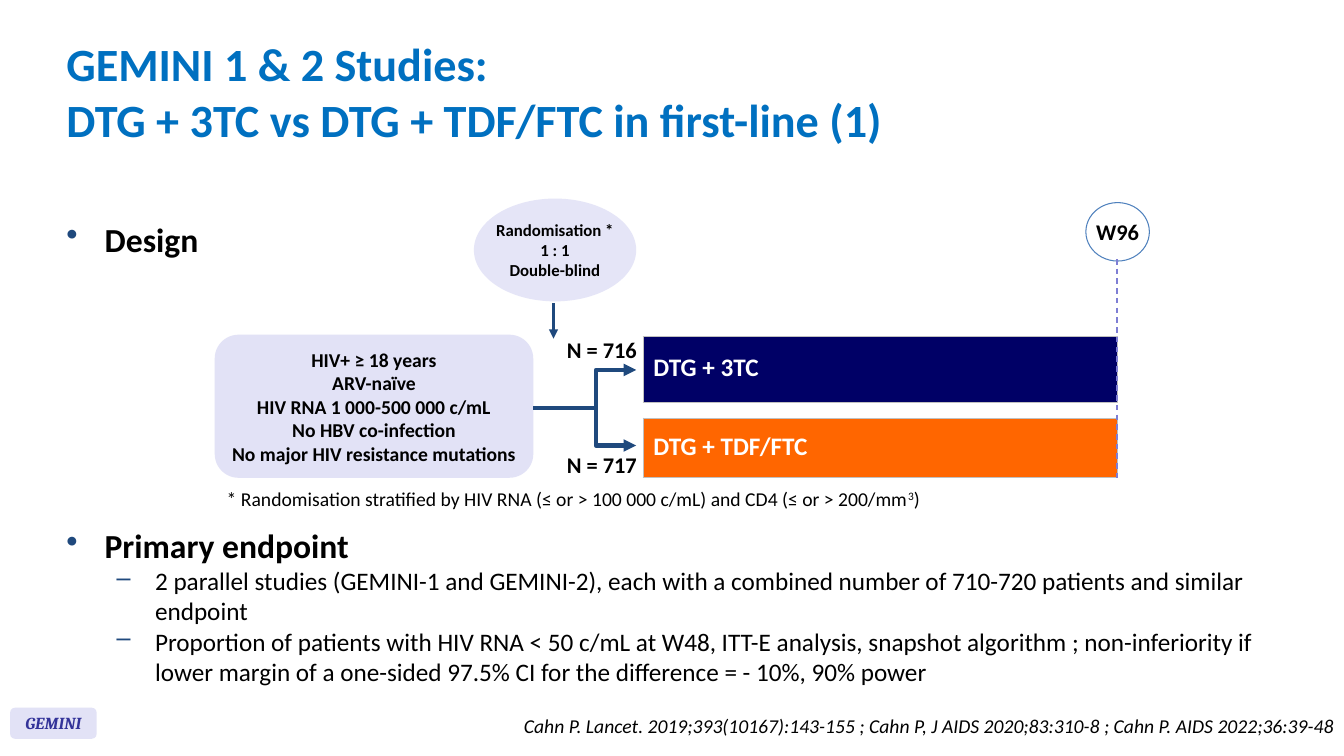
"""Build the GEMINI 1 & 2 study design slide."""
from lxml import etree
from pptx import Presentation
from pptx.dml.color import RGBColor
from pptx.enum import dml, shapes, text
from pptx.oxml import ns
from pptx.util import Inches, Pt

BLACK = RGBColor(0x00, 0x00, 0x00)
WHITE = RGBColor(0xFF, 0xFF, 0xFF)
TITLE_BLUE = RGBColor(0x00, 0x70, 0xC0)
NAVY = RGBColor(0x00, 0x00, 0x66)
ORANGE = RGBColor(0xFF, 0x66, 0x00)
ARROW_BLUE = RGBColor(0x1F, 0x49, 0x7D)
LAVENDER = RGBColor(0xE2, 0xE2, 0xF6)
PALE_LAVENDER = RGBColor(0xE5, 0xE5, 0xF7)
INDIGO = RGBColor(0x33, 0x33, 0x99)
CIRCLE_BLUE = RGBColor(0x4F, 0x81, 0xBD)
DASH_BLUE = RGBColor(0x7E, 0x7E, 0xD4)
BORDER_GREY = RGBColor(0xC0, 0xC0, 0xC0)
LEFT, CENTER, RIGHT = text.PP_ALIGN.LEFT, text.PP_ALIGN.CENTER, text.PP_ALIGN.RIGHT
TOP, MIDDLE = text.MSO_ANCHOR.TOP, text.MSO_ANCHOR.MIDDLE


def set_font(font, size, color=BLACK, bold=False, italic=False, name="Calibri"):
    """Set the look of a font."""
    font.name, font.size = name, Pt(size)
    font.bold, font.italic = bold, italic
    font.color.rgb = color


def write(frame, lines, size, align=LEFT, anchor=TOP, wrap=True, **style):
    """Write one paragraph per line in a text frame."""
    frame.word_wrap, frame.vertical_anchor = wrap, anchor
    for index, line in enumerate(lines):
        paragraph = frame.paragraphs[0] if index == 0 else frame.add_paragraph()
        paragraph.text, paragraph.alignment = line, align
        for run in paragraph.runs:
            set_font(run.font, size, **style)


def add_text(slide, box, lines, size, **style):
    """Add a text box."""
    shape = slide.shapes.add_textbox(*map(Inches, box))
    write(shape.text_frame, lines, size, **style)
    return shape.text_frame


def add_label(slide, preset, box, fill, lines, size, line=None, **style):
    """Add a filled shape with centred text."""
    shape = slide.shapes.add_shape(preset, *map(Inches, box))
    shape.shadow.inherit = False
    shape.fill.solid()
    shape.fill.fore_color.rgb = fill
    if line is None:
        shape.line.fill.background()
    else:
        shape.line.color.rgb, shape.line.width = line, Pt(0.75)
    write(shape.text_frame, lines, size, align=CENTER, anchor=MIDDLE, wrap=False, **style)


def style_line(line, color, width, ends=()):
    """Set the colour, width and arrowheads of a line."""
    line.color.rgb, line.width = color, Pt(width)
    for end in ends:
        etree.SubElement(line._get_or_add_ln(), ns.qn(f"a:{end}"), type="triangle")


def add_line(slide, start, end, color, width, ends=()):
    """Add a straight connector without a shadow."""
    points = map(Inches, (*start, *end))
    connector = slide.shapes.add_connector(shapes.MSO_CONNECTOR.STRAIGHT, *points)
    style_line(connector.line, color, width, ends)
    etree.SubElement(connector._element.spPr, ns.qn("a:effectLst"))
    return connector


def add_bullet(paragraph, mark, margin):
    """Give a paragraph a coloured hanging bullet."""
    properties = paragraph._p.get_or_add_pPr()
    properties.set("marL", str(Inches(margin)))
    properties.set("indent", str(-Inches(0.38)))
    color = etree.SubElement(properties, ns.qn("a:buClr"))
    etree.SubElement(color, ns.qn("a:srgbClr"), val=str(ARROW_BLUE))
    etree.SubElement(properties, ns.qn("a:buChar"), char=mark)


def add_section(slide, box, heading, details=()):
    """Add a bulleted heading with dashed details under it."""
    frame = add_text(slide, box, [heading, *details], 18)
    first, *others = frame.paragraphs
    add_bullet(first, "•", 0.38)
    set_font(first.runs[0].font, 24, bold=True)
    for paragraph in others:
        add_bullet(paragraph, "–", 0.88)


def add_arm(slide, box, name, fill):
    """Add a treatment arm as a one-cell table."""
    table = slide.shapes.add_table(1, 1, *map(Inches, box)).table
    table.first_row = table.horz_banding = False
    cell = table.cell(0, 0)
    cell.fill.solid()
    cell.fill.fore_color.rgb = fill
    write(cell.text_frame, [name], 18, color=WHITE, bold=True)
    cell.text_frame.paragraphs[0].line_spacing = 0.8
    cell.vertical_anchor = MIDDLE
    for index, side in enumerate(("lnL", "lnR", "lnT", "lnB")):
        border = etree.Element(ns.qn(f"a:{side}"), w=str(Pt(1)))
        solid = etree.SubElement(border, ns.qn("a:solidFill"))
        etree.SubElement(solid, ns.qn("a:srgbClr"), val=str(BORDER_GREY))
        cell._tc.get_or_add_tcPr().insert(index, border)


def add_fork(slide, left, top, height):
    """Add the stem and the two-headed bracket that lead to the arms."""
    bend, tip = left + 0.62, left + 1.02
    builder = slide.shapes.build_freeform(Inches(tip), Inches(top), scale=1.0)
    corners = [(bend, top), (bend, top + height), (tip, top + height)]
    builder.add_line_segments([(Inches(x), Inches(y)) for x, y in corners], close=False)
    bracket = builder.convert_to_shape()
    bracket.shadow.inherit = False
    bracket.fill.background()
    style_line(bracket.line, ARROW_BLUE, 3, ("headEnd", "tailEnd"))
    middle = top + height / 2
    add_line(slide, (left, middle), (bend, middle), ARROW_BLUE, 3)


def add_design(slide, left, top):
    """Draw the trial design from the patients to week 96."""
    preset = shapes.MSO_SHAPE
    add_arm(slide, (left + 4.25, top + 1.37, 4.7, 0.65), "DTG + 3TC", NAVY)
    add_arm(slide, (left + 4.25, top + 2.18, 4.7, 0.59), "DTG + TDF/FTC", ORANGE)
    add_line(slide, (left + 3.36, top + 1.04), (left + 3.36, top + 1.39),
             ARROW_BLUE, 2.25, ("tailEnd",))
    add_label(slide, preset.OVAL, (left + 2.57, top, 1.61, 1.02), PALE_LAVENDER,
              ["Randomisation *", "1 : 1", "Double-blind"], 12, bold=True)
    criteria = ["HIV+ ≥ 18 years", "ARV-naïve", "HIV RNA 1 000-500 000 c/mL",
                "No HBV co-infection", "No major HIV resistance mutations"]
    add_label(slide, preset.ROUNDED_RECTANGLE, (left, top + 1.35, 3.16, 1.42),
              LAVENDER, criteria, 14, bold=True)
    add_fork(slide, left + 3.16, top + 1.7, 0.75)
    for offset, count in ((1.32, "N = 716"), (2.46, "N = 717")):
        add_text(slide, (left + 3.39, top + offset, 0.9, 0.37), [count], 16,
                 align=CENTER, wrap=False, bold=True)
    add_label(slide, preset.OVAL, (left + 8.64, top + 0.04, 0.63, 0.58), WHITE,
              ["W96"], 16, line=CIRCLE_BLUE, bold=True)
    week = add_line(slide, (left + 8.95, top + 0.6), (left + 8.95, top + 2.81), DASH_BLUE, 1)
    week.line.dash_style = dml.MSO_LINE.DASH
    note = add_text(slide, (left + 0.02, top + 2.81, 7.99, 0.34),
                    ["* Randomisation stratified by HIV RNA (≤ or > 100 000 c/mL) "
                     "and CD4 (≤ or > 200/mm"], 14)
    for part, baseline in (("3", "30000"), (")", "0")):
        run = note.paragraphs[0].add_run()
        run.text = part
        set_font(run.font, 14)
        run._r.get_or_add_rPr().set("baseline", baseline)


def add_footer(slide, left, top):
    """Add the study tag and the references."""
    add_label(slide, shapes.MSO_SHAPE.ROUNDED_RECTANGLE, (left, top, 0.86, 0.31), LAVENDER,
              ["GEMINI"], 12, color=INDIGO, bold=True, italic=True, name="Cambria")
    add_text(slide, (left + 3.19, top + 0.01, 10.05, 0.34),
             ["Cahn P. Lancet. 2019;393(10167):143-155 ; Cahn P, J AIDS 2020;83:310-8 ; "
              "Cahn P. AIDS 2022;36:39-48"], 14, align=RIGHT, italic=True)


def main():
    """Build and save the presentation."""
    presentation = Presentation()
    presentation.slide_width, presentation.slide_height = Inches(13.33), Inches(7.5)
    slide = presentation.slides.add_slide(presentation.slide_layouts[6])
    add_text(slide, (0.56, 0.28, 9.36, 1.25),
             ["GEMINI 1 & 2 Studies:\nDTG + 3TC vs DTG + TDF/FTC in first-line (1)"],
             33, anchor=MIDDLE, color=TITLE_BLUE, bold=True)
    add_section(slide, (0.56, 2.12, 2.95, 0.63), "Design")
    add_design(slide, 2.13, 1.97)
    add_section(slide, (0.56, 5.16, 12.24, 1.76), "Primary endpoint", [
        "2 parallel studies (GEMINI-1 and GEMINI-2), each with a combined number of "
        "710-720 patients and similar endpoint",
        "Proportion of patients with HIV RNA < 50 c/mL at W48, ITT-E analysis, snapshot "
        "algorithm ; non-inferiority if lower margin of a one-sided 97.5% CI for the "
        "difference = - 10%, 90% power"])
    add_footer(slide, 0.1, 7.02)
    presentation.save("out.pptx")


if __name__ == "__main__":
    main()
